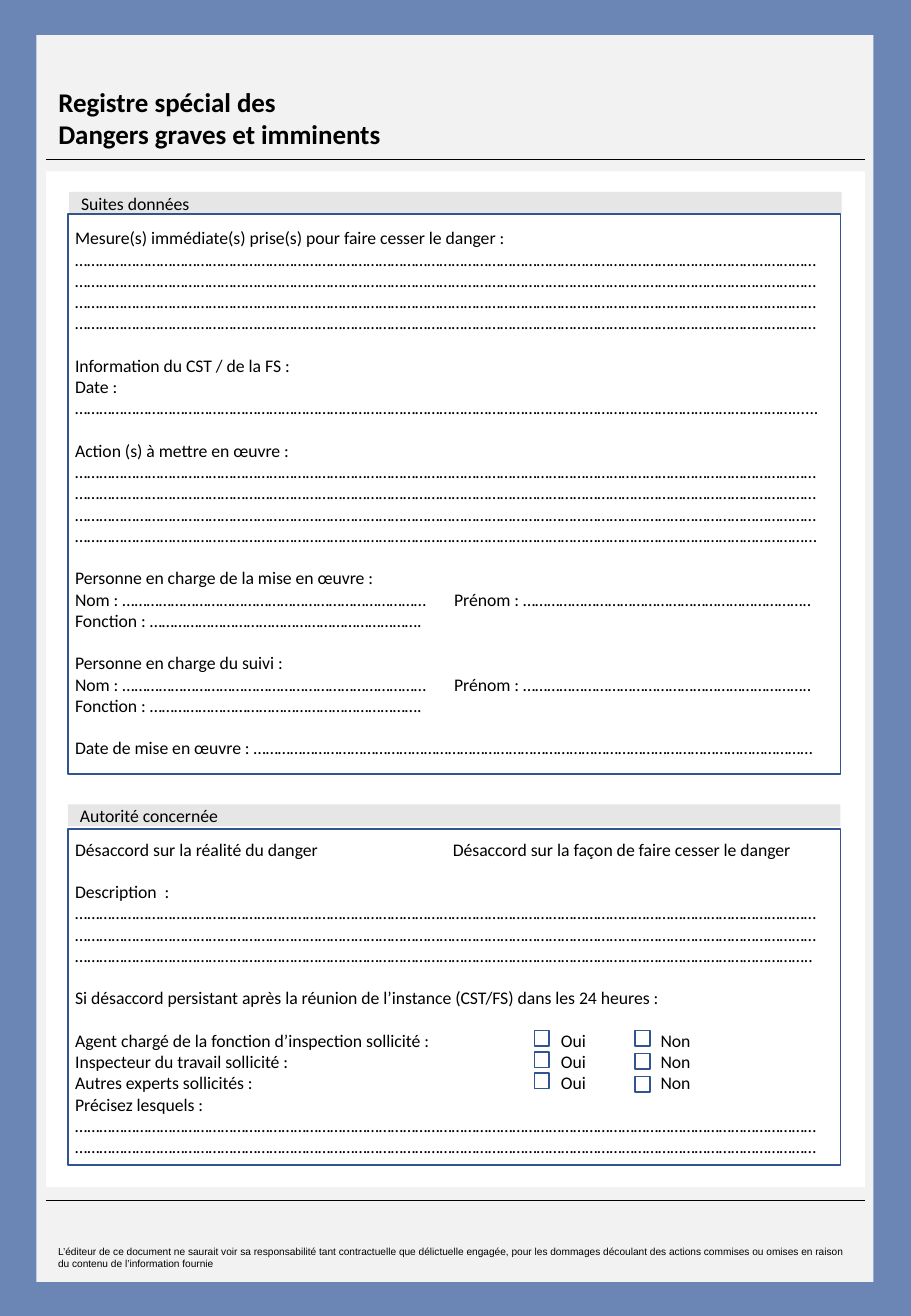
from dataclasses import dataclass

import lxml.etree
import pptx
import pptx.dml.color
import pptx.enum.shapes
import pptx.enum.text
import pptx.oxml.ns
import pptx.util
from pptx.util import Inches

BLACK = "000000"
BORDER = "325491"
BAND = "E7E6E6"
BODY_SIZE = 10.5
LINE_HEIGHT = 12.6
DOTS_PER_LINE = 61


@dataclass(frozen=True)
class Box:
    left: float
    top: float
    width: float
    height: float
    fill: str | None = None
    line: str | None = None


@dataclass(frozen=True)
class Line:
    text: str
    gap: bool = False
    tabs: tuple[float, ...] = ()


@dataclass(frozen=True)
class Section:
    heading: str
    band: Box
    frame: Box
    text_box: Box
    lines: tuple[Line, ...]


def dots(count: int, ending: str = "") -> str:
    return "…" * count + ending


def color(value: str) -> pptx.dml.color.RGBColor:
    return pptx.dml.color.RGBColor.from_string(value)


def add_box(slide, box: Box):
    shape = slide.shapes.add_shape(
        pptx.enum.shapes.MSO_SHAPE.RECTANGLE,
        Inches(box.left), Inches(box.top), Inches(box.width), Inches(box.height))
    shape.shadow.inherit = False
    if box.fill:
        shape.fill.solid()
        shape.fill.fore_color.rgb = color(box.fill)
    else:
        shape.fill.background()
    if box.line:
        shape.line.color.rgb = color(box.line)
        shape.line.width = pptx.util.Pt(1)
    else:
        shape.line.fill.background()
    return shape


def add_rule(slide, top: float) -> None:
    rule = slide.shapes.add_connector(
        pptx.enum.shapes.MSO_CONNECTOR.STRAIGHT,
        Inches(0.38), Inches(top), Inches(7.12), Inches(top))
    rule.line.color.rgb = color(BLACK)
    rule.line.width = pptx.util.Pt(0.75)
    lxml.etree.SubElement(rule.element.spPr, pptx.oxml.ns.qn("a:effectLst"))


def set_tabs(paragraph, positions: tuple[float, ...]) -> None:
    properties = paragraph._p.get_or_add_pPr()
    tab_list = lxml.etree.SubElement(properties, pptx.oxml.ns.qn("a:tabLst"))
    for position in positions:
        tab = lxml.etree.SubElement(tab_list, pptx.oxml.ns.qn("a:tab"))
        tab.set("pos", str(Inches(position)))
        tab.set("algn", "l")


def write(shape, lines: tuple[Line, ...], size: float = BODY_SIZE,
          font: str = "Calibri", bold: bool = False,
          anchor=pptx.enum.text.MSO_ANCHOR.TOP) -> None:
    frame = shape.text_frame
    frame.word_wrap = True
    frame.auto_size = pptx.enum.text.MSO_AUTO_SIZE.NONE
    frame.vertical_anchor = anchor
    for index, line in enumerate(lines):
        paragraph = frame.add_paragraph() if index else frame.paragraphs[0]
        paragraph.alignment = pptx.enum.text.PP_ALIGN.LEFT
        if line.gap:
            paragraph.space_before = pptx.util.Pt(LINE_HEIGHT)
        if line.tabs:
            set_tabs(paragraph, line.tabs)
        run = paragraph.add_run()
        run.text = line.text
        run.font.size = pptx.util.Pt(size)
        run.font.name = font
        run.font.bold = bold
        run.font.color.rgb = color(BLACK)


def add_text(slide, box: Box, lines: tuple[Line, ...], **style) -> None:
    shape = slide.shapes.add_textbox(
        Inches(box.left), Inches(box.top), Inches(box.width), Inches(box.height))
    write(shape, lines, **style)


def add_title(slide) -> None:
    title = slide.shapes.title
    title.left, title.top = Inches(0.38), Inches(0.65)
    title.width, title.height = Inches(6.29), Inches(0.64)
    write(title, (Line("Registre spécial des"), Line("Dangers graves et imminents")),
          size=16, bold=True)
    title.element.getparent().append(title.element)


def add_section(slide, section: Section) -> None:
    write(add_box(slide, section.band), (Line(section.heading),),
          anchor=pptx.enum.text.MSO_ANCHOR.MIDDLE)
    add_box(slide, section.frame)
    add_text(slide, section.text_box, section.lines)


def person(role: str) -> tuple[Line, ...]:
    return (
        Line(f"Personne en charge {role} :", gap=True),
        Line(f"Nom : {dots(25)}\tPrénom : {dots(23, '..')}", tabs=(3.12,)),
        Line(f"Fonction : {dots(22, '.')}"),
    )


def yes_no(label: str, gap: bool = False) -> Line:
    return Line(f"{label} :\tOui\tNon", gap, (4.0, 4.82))


FOLLOW_UP = Section(
    "Suites données",
    Box(0.57, 1.58, 6.36, 0.18, fill=BAND),
    Box(0.56, 1.76, 6.36, 4.61, line=BORDER),
    Box(0.52, 1.82, 6.36, 4.7),
    (
        Line("Mesure(s) immédiate(s) prise(s) pour faire cesser le danger : "
             + dots(4 * DOTS_PER_LINE)),
        Line("Information du CST / de la FS :", gap=True),
        Line("Date : " + dots(59, "......")),
        Line("Action (s) à mettre en œuvre :", gap=True),
        Line(dots(4 * DOTS_PER_LINE - 1, "...")),
        *person("de la mise en œuvre"),
        *person("du suivi"),
        Line("Date de mise en œuvre : " + dots(46), gap=True),
    ))

AUTHORITY = Section(
    "Autorité concernée",
    Box(0.56, 6.62, 6.36, 0.18, fill=BAND),
    Box(0.56, 6.82, 6.36, 2.77, line=BORDER),
    Box(0.52, 6.85, 6.39, 2.75),
    (
        Line("Désaccord sur la réalité du danger\t"
             "Désaccord sur la façon de faire cesser le danger", tabs=(3.11,)),
        Line("Description  : " + dots(3 * DOTS_PER_LINE - 1, ".."), gap=True),
        Line("Si désaccord persistant après la réunion de l’instance (CST/FS) "
             "dans les 24 heures :", gap=True),
        yes_no("Agent chargé de la fonction d’inspection sollicité", gap=True),
        yes_no("Inspecteur du travail sollicité"),
        yes_no("Autres experts sollicités"),
        Line("Précisez lesquels : " + dots(2 * DOTS_PER_LINE)),
    ))


def main() -> None:
    presentation = pptx.Presentation()
    presentation.slide_width = Inches(7.5)
    presentation.slide_height = Inches(10.83)
    slide = presentation.slides.add_slide(presentation.slide_layouts[5])
    slide.background.fill.solid()
    slide.background.fill.fore_color.rgb = color("6B86B5")

    add_box(slide, Box(0.3, 0.29, 6.89, 10.26, fill="F2F2F2"))
    add_box(slide, Box(0.38, 1.41, 6.74, 8.36, fill="FFFFFF"))
    add_title(slide)
    add_text(slide, Box(0.38, 10.2, 6.74, 0.3), (Line(
        "L’éditeur de ce document ne saurait voir sa responsabilité tant contractuelle "
        "que délictuelle engagée, pour les dommages découlant des actions commises ou "
        "omises en raison du contenu de l’information fournie"),), size=6, font="Arial")
    for rule_top in (9.88, 1.31):
        add_rule(slide, rule_top)
    for section in (FOLLOW_UP, AUTHORITY):
        add_section(slide, section)
    for left, pitch in ((4.4, 0.175), (5.23, 0.19)):
        for row in range(3):
            add_box(slide, Box(left, 8.48 + row * pitch, 0.12, 0.13, line=BORDER))

    presentation.save("out.pptx")


if __name__ == "__main__":
    main()
